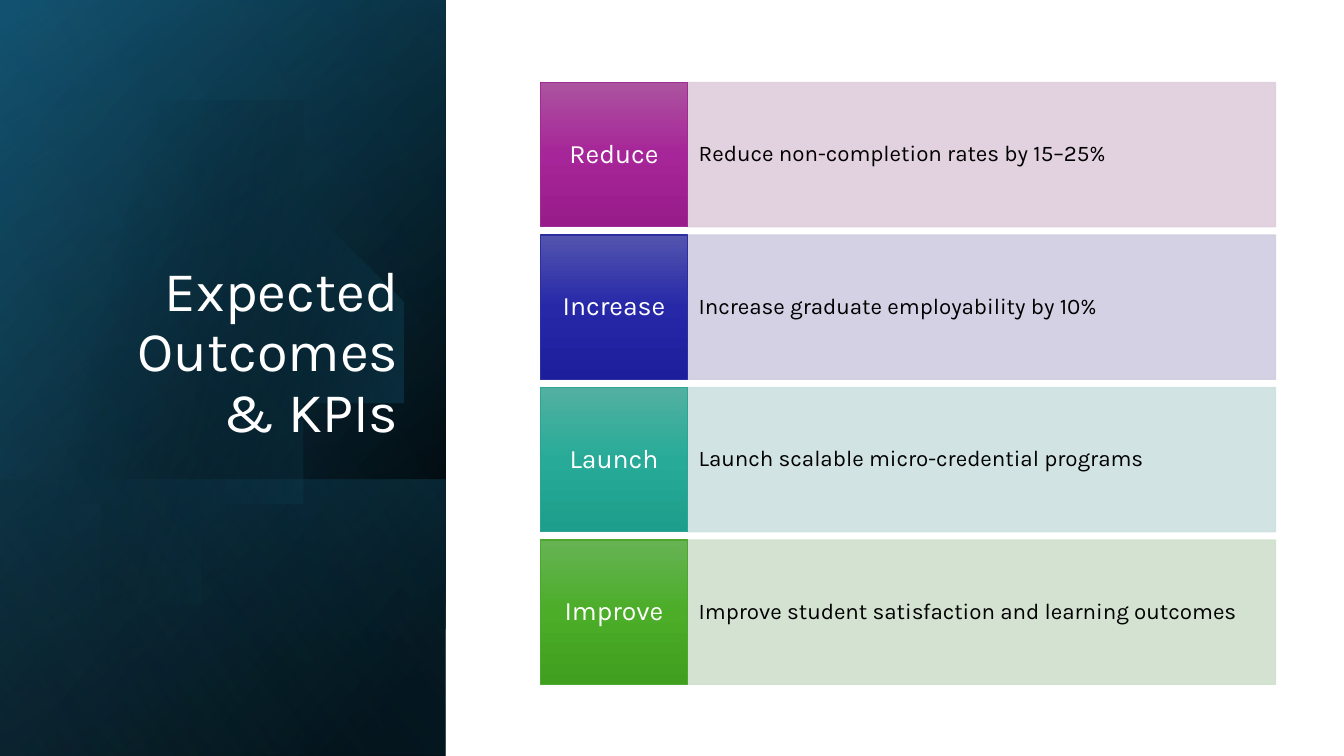
from lxml import etree
from pptx import Presentation
from pptx.dml.color import RGBColor
from pptx.enum.shapes import MSO_SHAPE
from pptx.enum.text import MSO_ANCHOR, MSO_AUTO_SIZE, PP_ALIGN
from pptx.oxml.ns import qn
from pptx.util import Inches, Pt

RECT = MSO_SHAPE.RECTANGLE
LEFT, CENTER, RIGHT = PP_ALIGN.LEFT, PP_ALIGN.CENTER, PP_ALIGN.RIGHT
MIDDLE, BOTTOM = MSO_ANCHOR.MIDDLE, MSO_ANCHOR.BOTTOM

WIDTH, HEIGHT = 13.33, 7.5
TITLE = "Expected Outcomes & KPIs"
ROWS = [
    ("Reduce", "Reduce non-completion rates by 15–25%",
     ("AC53A0", "A62598", "991C8B"), "A02B93", "DFCDDC"),
    ("Increase", "Increase graduate employability by 10%",
     ("5354AE", "2628A8", "1D1E9B"), "2C2EA2", "CFCDE0"),
    ("Launch", "Launch scalable micro-credential programs",
     ("53B0A1", "27AB98", "1D9D8B"), "2DA594", "CDE1E0"),
    ("Improve", "Improve student satisfaction and learning outcomes",
     ("66B354", "4BAD28", "409F1E"), "4EA72E", "D0E1CD"),
]

PANEL_W = 4.42
LOWER_H = 2.74
BASE = ([(8, "000000", 100), (100, "104862", 100)], 50)
TINT = ([(0, "000000", 0), (99, "156082", 46)], 30)
LOWER = ([(2, "156082", 29), (100, "000000", 30)], 130)
DISC = ([(29, "000000", 0), (100, "156082", 43)], 14)
GLOW = ([(0, "000000", 0), (99, "46B1E1", 11)], 120)
DISC_START = (1.49, 1.1)
DISC_CURVES = [
    ((2.46, 1.12), (3.35, 1.77), (3.63, 2.75)),
    ((3.98, 3.97), (3.28, 5.23), (2.07, 5.58)),
    ((1.31, 5.8), (0.53, 5.61), (-0.03, 5.14)),
    ((-0.15, 5.03), (-0.15, 1.75), (0, 1.61)),
    ((0.23, 1.42), (0.5, 1.28), (0.8, 1.19)),
    ((1.03, 1.13), (1.26, 1.1), (1.49, 1.1)),
]
STRAIGHT = 3
CURVE_STEPS = 24

GRID_X, GRID_Y = 5.36, 0.82
LABEL_W, BAR_W = 1.46, 5.83
ROW_H, ROW_PITCH = 1.43, 1.513


def rgb(color):
    return RGBColor.from_string(color)


def set_alpha(fill_color_parent, alpha):
    for clr in fill_color_parent.iter(qn("a:srgbClr")):
        etree.SubElement(clr, qn("a:alpha"), val=str(alpha * 1000))


def set_gradient(sp, stops, angle):
    sp.fill.gradient()
    grad = sp._element.spPr.find(qn("a:gradFill"))
    for child in list(grad):
        grad.remove(child)
    stop_list = etree.SubElement(grad, qn("a:gsLst"))
    for pos, color, alpha in stops:
        gs = etree.SubElement(stop_list, qn("a:gs"), pos=str(pos * 1000))
        clr = etree.SubElement(gs, qn("a:srgbClr"), val=color)
        if alpha < 100:
            etree.SubElement(clr, qn("a:alpha"), val=str(alpha * 1000))
    etree.SubElement(grad, qn("a:lin"), ang=str(angle * 60000), scaled="0")


def add_rect(s, x, y, w, h):
    sp = s.shapes.add_shape(RECT, Inches(x), Inches(y), Inches(w), Inches(h))
    sp.shadow.inherit = False
    return sp


def add_panel(s, top, height, gradient):
    x = (PANEL_W - height) / 2
    y = top + (height - PANEL_W) / 2
    sp = add_rect(s, x, y, height, PANEL_W)
    sp.rotation = 90
    sp._element.spPr.find(qn("a:xfrm")).set("flipH", "1")
    set_gradient(sp, *gradient)
    sp.line.fill.background()


def disc_points():
    start = DISC_START
    for i, (c1, c2, end) in enumerate(DISC_CURVES):
        if i == STRAIGHT:
            yield from (c1, c2, end)
        else:
            for step in range(1, CURVE_STEPS + 1):
                t = step / CURVE_STEPS
                u = 1 - t
                yield tuple(u**3 * a + 3 * u * u * t * b + 3 * u * t * t * c + t**3 * d
                            for a, b, c, d in zip(start, c1, c2, end))
        start = end


def add_disc(s):
    builder = s.shapes.build_freeform(*DISC_START, scale=Inches(1))
    builder.add_line_segments(list(disc_points()), close=True)
    sp = builder.convert_to_shape()
    sp.shadow.inherit = False
    set_gradient(sp, *DISC)
    sp.line.fill.background()


def write(sp, text, size, color, align=LEFT, anchor=MIDDLE, inset=(0.1, 0.05)):
    tf = sp.text_frame
    tf.word_wrap = True
    tf.auto_size = MSO_AUTO_SIZE.NONE
    tf.vertical_anchor = anchor
    tf.margin_left = tf.margin_right = Inches(inset[0])
    tf.margin_top = tf.margin_bottom = Inches(inset[1])
    p = tf.paragraphs[0]
    p.alignment = align
    p.line_spacing = 0.9
    p.space_before = Pt(0)
    r = p.add_run()
    r.text = text
    r.font.name = "Karla"
    r.font.size = Pt(size)
    r.font.color.rgb = rgb(color)


def add_row(s, index, label, detail, shades, edge, tint):
    y = GRID_Y + index * ROW_PITCH
    bar = add_rect(s, GRID_X + LABEL_W, y, BAR_W, ROW_H)
    bar.fill.solid()
    bar.fill.fore_color.rgb = rgb(tint)
    bar.line.color.rgb = rgb(tint)
    bar.line.width = Pt(1)
    set_alpha(bar._element.spPr, 90)
    write(bar, detail, 16, "000000", inset=(0.11, 0.36))
    box = add_rect(s, GRID_X, y, LABEL_W, ROW_H)
    set_gradient(box, [(50 * i, c, 100) for i, c in enumerate(shades)], 90)
    box.line.color.rgb = rgb(edge)
    box.line.width = Pt(1)
    write(box, label, 19, "FFFFFF", align=CENTER, inset=(0.08, 0.14))


def main():
    prs = Presentation()
    prs.slide_width, prs.slide_height = Inches(WIDTH), Inches(HEIGHT)
    s = prs.slides.add_slide(prs.slide_layouts[5])
    add_panel(s, 0, HEIGHT, BASE)
    add_panel(s, 0, HEIGHT, TINT)
    add_panel(s, HEIGHT - LOWER_H, LOWER_H, LOWER)
    add_disc(s)
    add_panel(s, 0, HEIGHT, GLOW)

    title = s.shapes.title
    title.left, title.top = Inches(0.64), Inches(1.84)
    title.width, title.height = Inches(3.41), Inches(2.62)
    write(title, TITLE, 40, "FFFFFF", align=RIGHT, anchor=BOTTOM)
    s.shapes._spTree.append(title._element)

    for index, row in enumerate(ROWS):
        add_row(s, index, *row)
    prs.save("out.pptx")


if __name__ == "__main__":
    main()
